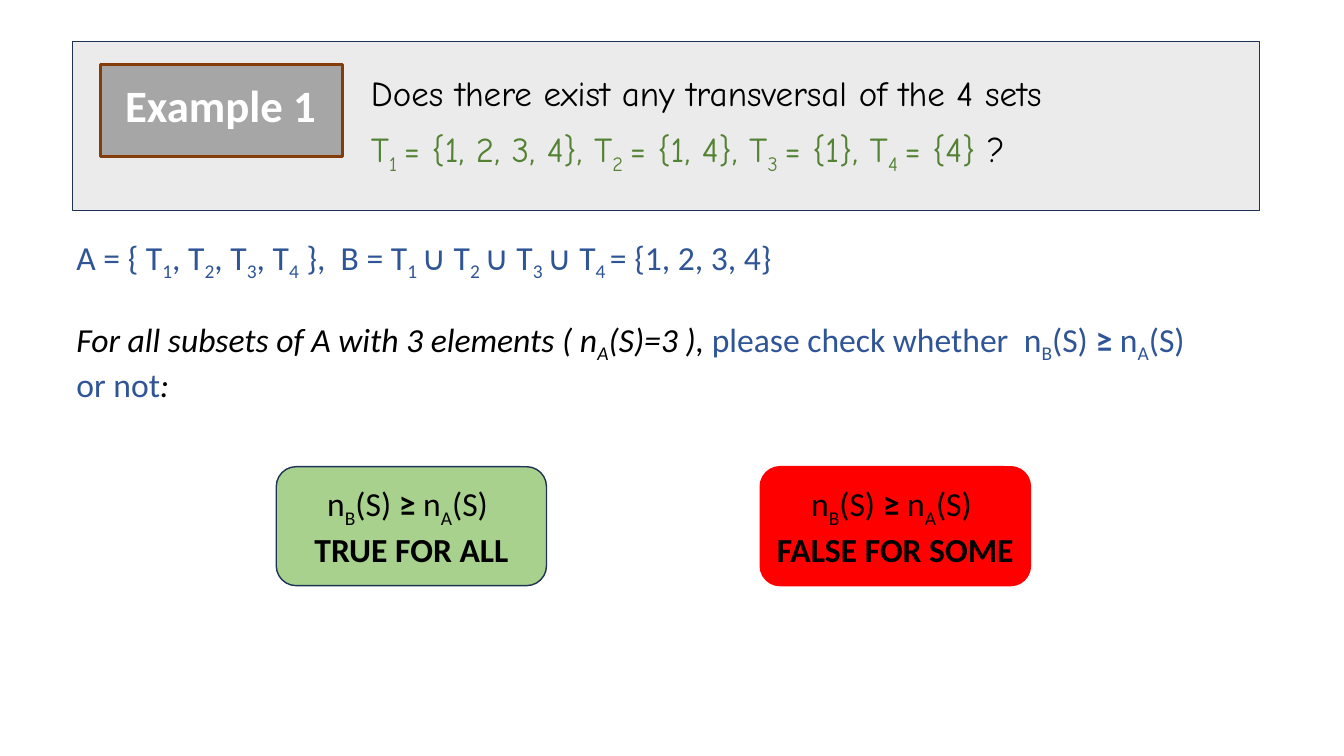
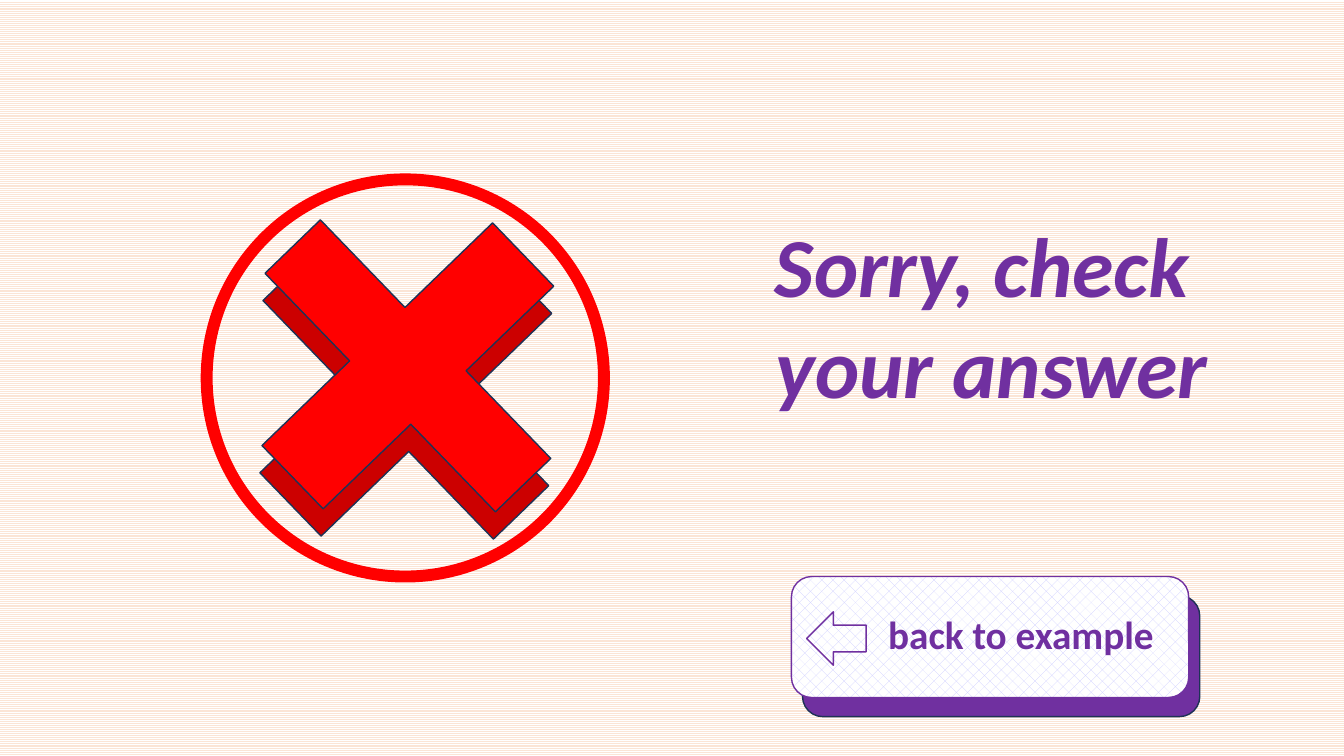
from lxml import etree
from pptx import Presentation
from pptx.dml.color import RGBColor
from pptx.enum.dml import MSO_PATTERN
from pptx.enum.shapes import MSO_SHAPE
from pptx.enum.text import MSO_ANCHOR, PP_ALIGN
from pptx.oxml.ns import qn
from pptx.util import Pt

PX = 9144
RECT, ROUND = MSO_SHAPE.RECTANGLE, MSO_SHAPE.ROUNDED_RECTANGLE
CIRCLE, CROSS, ARROW = MSO_SHAPE.FLOWCHART_CONNECTOR, MSO_SHAPE.CROSS, MSO_SHAPE.LEFT_ARROW
LEFT, CENTER = PP_ALIGN.LEFT, PP_ALIGN.CENTER
TOP, MIDDLE = MSO_ANCHOR.TOP, MSO_ANCHOR.MIDDLE
STRIPES, DOTS = MSO_PATTERN.LIGHT_HORIZONTAL, MSO_PATTERN.PERCENT_25

BLACK, WHITE, NAVY, BLUE = "000000", "FFFFFF", "1E3256", "2F5597"
GREEN, RED, PURPLE = "548235", "FF0000", "7030A0"
BODY = {"name": "Calibri", "size": Pt(24)}
QUESTION = {"name": "Comic Neue", "size": Pt(25)}
SPACED = {"line_spacing": 0.9, "space_before": Pt(10)}
WIDE_SPACE = {"spc": "540"}
SUBSCRIPT = {"baseline": "-25000"}


def rgb(value):
    """Turn a hex string into a colour."""
    return RGBColor.from_string(value)


def assign(target, values):
    """Set attributes from a dict of format values."""
    for name, value in values.items():
        setattr(target, name, value)


def paint_pattern(fill, pattern, fore):
    """Apply a pattern on white to a fill."""
    fill.patterned()
    fill.pattern = pattern
    fill.fore_color.rgb = rgb(fore)
    fill.back_color.rgb = rgb(WHITE)


def add_run(p, text, font, color, attrs):
    """Add one run with its font, colour and XML attributes."""
    r = p.add_run()
    r.text = text
    assign(r.font, font)
    r.font.color.rgb = rgb(color)
    for name, value in attrs.items():
        r._r.get_or_add_rPr().set(name, value)


def write(tf, paragraphs, font, align=LEFT, anchor=TOP, para=None, margins=None):
    """Fill a frame with lists of (text, colour, font, attributes); ~ toggles subscript."""
    tf.word_wrap = True
    tf.vertical_anchor = anchor
    assign(tf, {f"margin_{side}": v * PX for side, v in (margins or {}).items()})
    for i, runs in enumerate(paragraphs):
        p = tf.add_paragraph() if i else tf.paragraphs[0]
        assign(p, {"alignment": align, **(para or {})})
        for text, color, extra, attrs in runs:
            for j, piece in enumerate(text.split("~")):
                if piece:
                    add_run(p, piece, {**font, **extra}, color,
                            SUBSCRIPT if j % 2 else attrs)


def run(text, color=BLACK, attrs=None, **extra):
    """Describe one run for write."""
    return text, color, extra, attrs or {}


def add_text(s, box, paragraphs, font, **options):
    """Add a wrapped text box and return its frame."""
    tf = s.shapes.add_textbox(*(v * PX for v in box)).text_frame
    write(tf, paragraphs, font, **options)
    return tf


def add_box(s, kind, box, fill, line, width=1):
    """Add a preset shape with an optional solid fill."""
    sp = s.shapes.add_shape(kind, *(v * PX for v in box))
    sp.shadow.inherit = False
    if fill:
        sp.fill.solid()
        sp.fill.fore_color.rgb = rgb(fill)
    else:
        sp.fill.background()
    sp.line.color.rgb = rgb(line)
    sp.line.width = Pt(width)
    return sp


def comparison(color):
    """Give the runs that compare both set sizes."""
    return [run("n~B~(S) ", color), run("≥ ", color, bold=True), run("n~A~(S)", color)]


def question_panel(s, x, y, w, h):
    """Draw the panel with the example label and its question."""
    panel = add_box(s, RECT, (x, y, w, h), "D9D9D9", NAVY)
    color = panel.fill._xPr.find(".//" + qn("a:srgbClr"))
    etree.SubElement(color, qn("a:alpha"), val="50000")
    sets = "T~1 ~= {1, 2, 3, 4}, T~2 ~= {1, 4}, T~3 ~= {1}, T~4 ~= {4} "
    add_text(s, (x + 286, y + 30, 903, 124),
             [[run("Does there exist any transversal of the 4 sets")],
              [run(sets, GREEN), run("?")]], QUESTION, para=SPACED)
    label = add_box(s, RECT, (x + 28, y + 23, 240, 91), "A6A6A6", "843C0B", 2)
    write(label.text_frame, [[run("Example 1", WHITE)]],
          {**BODY, "size": Pt(32), "bold": True},
          para={"line_spacing": 0.9}, margins={"left": 24, "top": 19})


def task_text(s, x, y, w):
    """Write the two sets and the condition to check."""
    add_text(s, (x, y, w, 50),
             [[run("A = { T~1~, T~2~, T~3~, T~4~ },", BLUE), run(" ", BLUE, WIDE_SPACE),
               run("B = T~1 ~∪ T~2 ~∪ T~3 ~∪ T~4 ~= {1, 2, 3, 4}", BLUE)]], BODY)
    add_text(s, (x, y + 81, w, 91),
             [[run("For all subsets of A with 3 elements ( n~A~(S)=3 ), ", italic=True),
               run("please check whether", BLUE), run(" ", BLUE, WIDE_SPACE),
               *comparison(BLUE)],
              [run("or not", BLUE), run(":", italic=True)]], BODY)


def answer_button(s, x, y, verdict, fill, line):
    """Draw one answer with the comparison above its verdict."""
    sp = add_box(s, ROUND, (x, y, 268, 118), fill, line)
    write(sp.text_frame, [[*comparison(BLACK), run(" ")], [run(verdict, bold=True)]],
          BODY, align=CENTER, anchor=MIDDLE)


def wrong_mark(s, x, y, size):
    """Draw the ringed cross with its darker offset layer."""
    add_box(s, CIRCLE, (x, y, size, size), None, RED, 8.5)
    for dx, dy, fill in ((33, 53, "CC0000"), (35, 26, RED)):
        cross = add_box(s, CROSS, (x + dx, y + dy, 329, 318), fill, NAVY)
        cross.adjustments[0] = 0.38
        cross.rotation = 46


def back_button(s, x, y, w, h):
    """Draw the raised button with its arrow."""
    add_box(s, ROUND, (x + 11, y + 19, w, h), PURPLE, NAVY)
    face = add_box(s, ROUND, (x, y, w, h), WHITE, PURPLE)
    paint_pattern(face.fill, DOTS, "CCCCFF")
    write(face.text_frame, [[run("back to example", PURPLE)]],
          {**BODY, "size": Pt(28), "bold": True}, align=CENTER, anchor=MIDDLE,
          para=SPACED, margins={"left": 71})
    add_box(s, ARROW, (x + 15, y + 35, 59, 53), None, PURPLE)


def example_slide(s):
    """Build the slide that asks the question."""
    question_panel(s, 72, 41, 1177, 168)
    task_text(s, 66, 230, 1190)
    answers = (("TRUE FOR ALL", "A9D18E", NAVY), ("FALSE FOR SOME", RED, RED))
    for i, answer in enumerate(answers):
        answer_button(s, 274 + 480 * i, 463, *answer)


def wrong_answer_slide(s):
    """Build the slide that sends the reader back."""
    paint_pattern(s.background.fill, STRIPES, "FBE5D6")
    tf = add_text(s, (724, 207, 500, 313),
                  [[run("Sorry, check", PURPLE)], [run("your answer", PURPLE)]],
                  {**BODY, "size": Pt(60), "bold": True, "italic": True}, align=CENTER)
    tf.paragraphs[1]._p.get_or_add_pPr().set("marL", str(19 * PX))
    wrong_mark(s, 205, 178, 394)
    back_button(s, 785, 572, 394, 120)


def main():
    """Build and save the presentation."""
    prs = Presentation()
    prs.slide_width, prs.slide_height = 1333 * PX, 750 * PX
    for build in (example_slide, wrong_answer_slide):
        build(prs.slides.add_slide(prs.slide_layouts[6]))
    prs.save("out.pptx")


if __name__ == "__main__":
    main()
